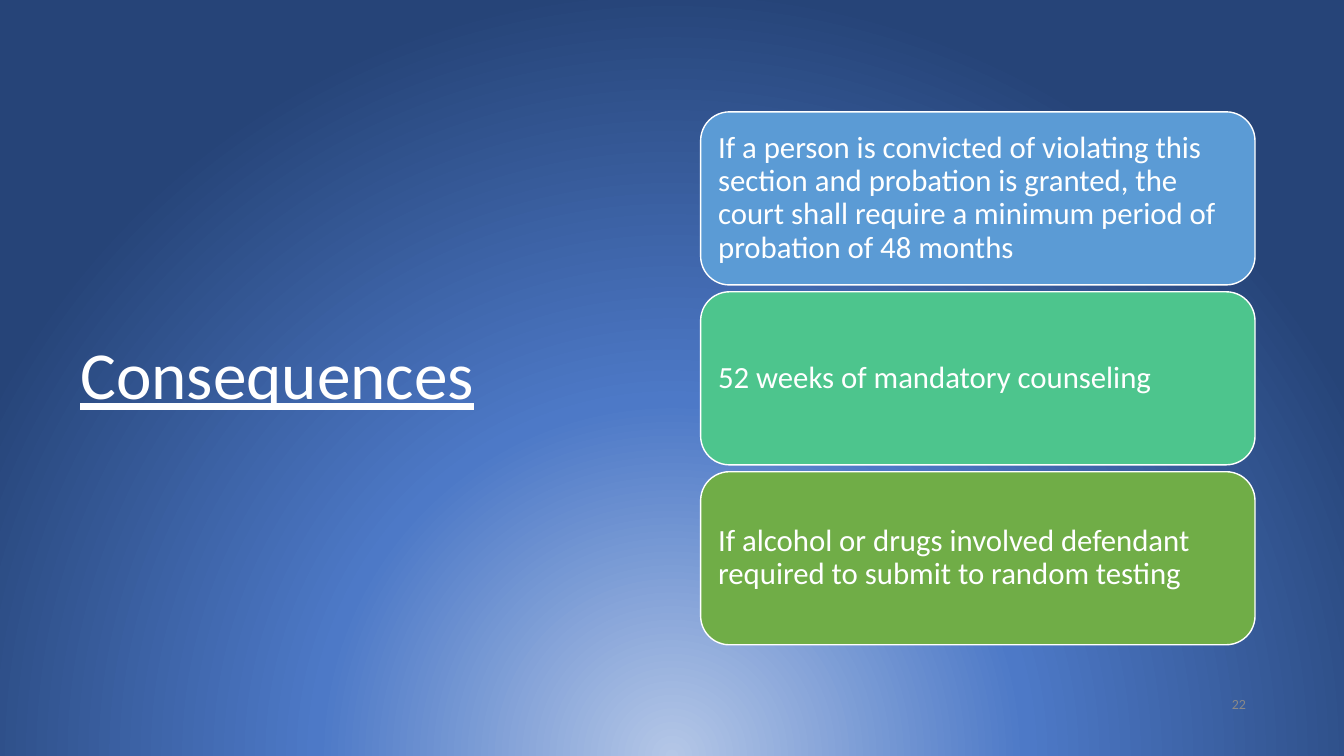
from typing import NamedTuple

from pptx import Presentation, oxml
from pptx import util as u
from pptx.dml.color import RGBColor
from pptx.enum import shapes, text
from pptx.oxml.ns import nsdecls

WIDE, HIGH = u.Inches(13.33), u.Inches(7.5)
FONT = "Calibri"
HUES = {
    "white": "FFFFFF", "grey": "898989",
    "blue": "5B9BD5", "mint": "4DC58D", "green": "70AD47",
    "glow": "B4C7E7", "mid": "4D79C7", "navy": "264478",
}


class Area(NamedTuple):
    """Place and size, in percent of the slide."""
    left: float
    top: float
    width: float
    height: float


class Card(NamedTuple):
    hue: str
    words: str


TITLE = Area(5.25, 29.47, 32.33, 41.07)
PAGE = Area(88.8, 90.8, 4.65, 4.53)
FIRST = Area(52.13, 14.8, 41.25, 22.9)
STEP = 23.8
CARDS = [
    Card("blue", "If a person is convicted of violating this section and probation "
         "is granted, the court shall require a minimum period of probation of 48 months"),
    Card("mint", "52 weeks of mandatory counseling"),
    Card("green", "If alcohol or drugs involved defendant required to submit to random testing"),
]
STOPS = [(0, "glow"), (46, "mid"), (100, "navy")]


def color(name: str) -> RGBColor:
    return RGBColor.from_string(HUES[name])


def place(area: Area) -> list[int]:
    sides = (WIDE, HIGH, WIDE, HIGH)
    return [round(side * part / 100) for side, part in zip(sides, area)]


def write(shape, words: str, size: int, hue: str = "white",
          align=text.PP_ALIGN.LEFT, lines: float = 0.9):
    frame = shape.text_frame
    frame.word_wrap = True
    frame.vertical_anchor = text.MSO_ANCHOR.MIDDLE
    para = frame.paragraphs[0]
    para.text = words
    para.alignment = align
    para.line_spacing = lines
    para.font.name = FONT
    para.font.size = u.Pt(size)
    para.font.color.rgb = color(hue)
    return para


def paint(slide) -> None:
    """Fill the background with a glow that rises from below the slide."""
    fill = slide.background.fill
    fill.gradient()
    stops = "".join(f'<a:gs pos="{pos * 1000}"><a:srgbClr val="{HUES[hue]}"/></a:gs>'
                    for pos, hue in STOPS)
    glow = oxml.parse_xml(
        f'<a:gradFill {nsdecls("a")} rotWithShape="1"><a:gsLst>{stops}</a:gsLst>'
        '<a:path path="circle"><a:fillToRect l="50000" t="130000" r="50000" b="-30000"/>'
        '</a:path></a:gradFill>')
    old = slide.element.xpath(".//p:bgPr/a:gradFill")[0]
    old.getparent().replace(old, glow)


def draw(slide, card: Card, row: int) -> None:
    area = FIRST._replace(top=FIRST.top + row * STEP)
    box = slide.shapes.add_shape(shapes.MSO_SHAPE.ROUNDED_RECTANGLE, *place(area))
    box.shadow.inherit = False
    box.fill.solid()
    box.fill.fore_color.rgb = color(card.hue)
    box.line.color.rgb = color("white")
    box.line.width = u.Pt(1)
    frame = box.text_frame
    frame.margin_left = frame.margin_right = u.Inches(0.09)
    frame.margin_top = frame.margin_bottom = u.Inches(0.09)
    write(box, card.words, 22)


def main() -> None:
    deck = Presentation()
    deck.slide_width, deck.slide_height = WIDE, HIGH
    slide = deck.slides.add_slide(deck.slide_layouts[6])
    paint(slide)

    # Title
    title = slide.shapes.add_textbox(*place(TITLE))
    write(title, "Consequences", 48).font.underline = True

    # Page number
    page = slide.shapes.add_textbox(*place(PAGE))
    write(page, "22", 10, "grey", text.PP_ALIGN.RIGHT, 1.0)

    # Stack of cards
    for row, card in enumerate(CARDS):
        draw(slide, card, row)

    deck.save("out.pptx")


if __name__ == "__main__":
    main()
